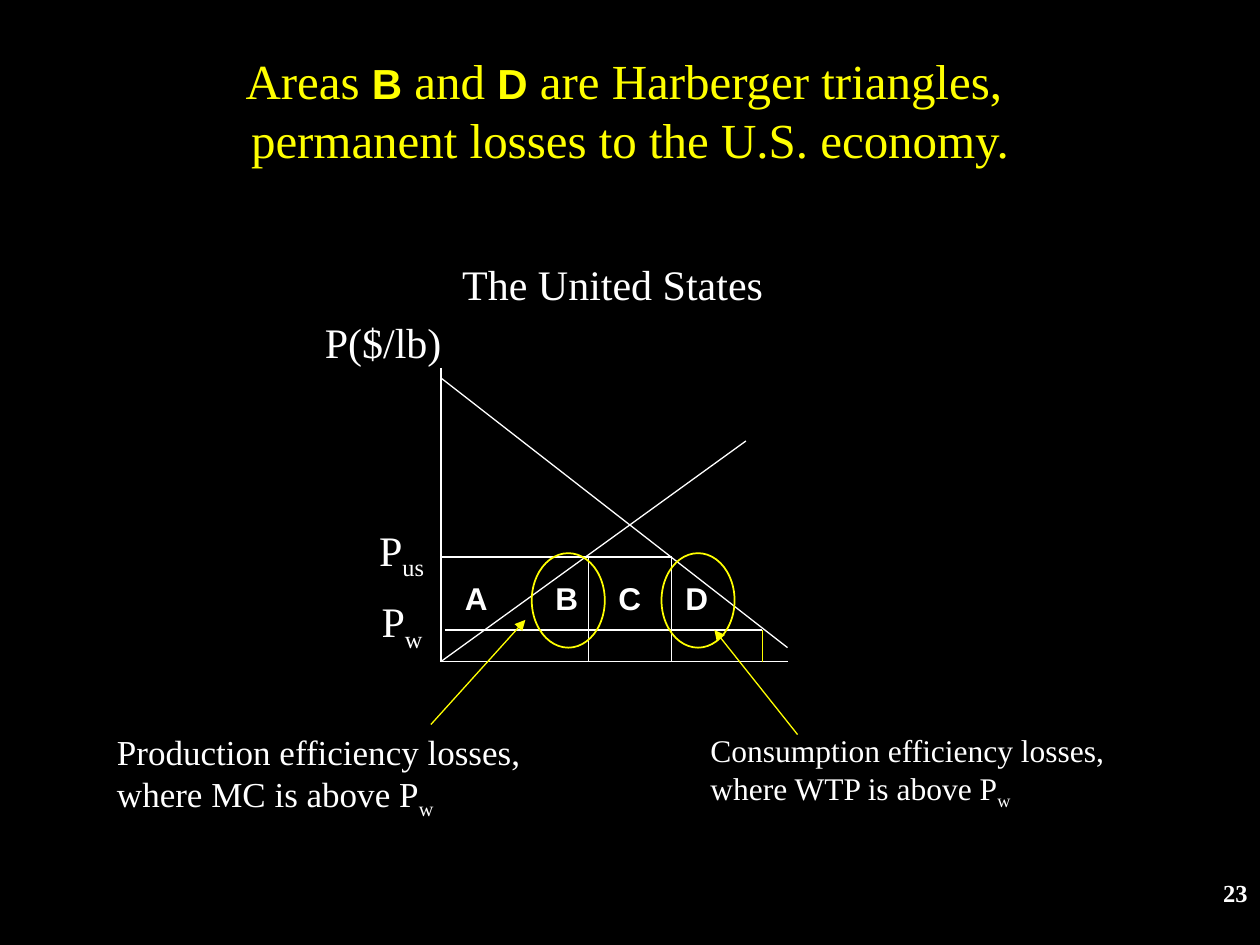
import pptx
import pptx.util
import pptx.dml.color
import pptx.enum.shapes
import pptx.enum.text
import pptx.oxml.ns
from lxml import etree

Inches = pptx.util.Inches
Pt = pptx.util.Pt
ALIGN = pptx.enum.text.PP_ALIGN
COLORS = {"back": "000000", "text": "FFFFFF", "accent": "FFFF00"}
SERIF, SANS = "Times New Roman", "Arial"


def rgb(name):
    return pptx.dml.color.RGBColor.from_string(COLORS[name])


def style_font(font, size, name=SERIF, bold=False, color="text"):
    font.size, font.name, font.bold = Pt(size), name, bold
    font.color.rgb = rgb(color)


def add_text(page, left, top, width, height, lines, size, name=SERIF, bold=False,
             align=ALIGN.LEFT, wrap=False):
    """Each line is a (text, subscript) pair and becomes one paragraph."""
    box = page.shapes.add_textbox(Inches(left), Inches(top), Inches(width), Inches(height))
    box.text_frame.word_wrap = wrap
    for index, (text, subscript) in enumerate(lines):
        para = box.text_frame.paragraphs[0] if index == 0 else box.text_frame.add_paragraph()
        para.alignment = align
        style_font(para.font, size, name, bold)
        para.add_run().text = text
        if subscript:
            span = para.add_run()
            span.text = subscript
            span.font._element.set("baseline", "-25000")


def add_line(page, start, end, color="text", arrow=False):
    line = page.shapes.add_connector(
        pptx.enum.shapes.MSO_CONNECTOR.STRAIGHT, *[Inches(value) for value in start + end])
    line.line.color.rgb = rgb(color)
    line.line.width = Pt(0.75)
    if arrow:
        etree.SubElement(line.line._get_or_add_ln(), pptx.oxml.ns.qn("a:tailEnd"), type="triangle")
    etree.SubElement(line._element.spPr, pptx.oxml.ns.qn("a:effectLst"))


def add_title(page, left, top, width, height):
    box = page.shapes.add_textbox(Inches(left), Inches(top), Inches(width), Inches(height))
    box.text_frame.word_wrap = True
    box.text_frame.vertical_anchor = pptx.enum.text.MSO_ANCHOR.MIDDLE
    para = box.text_frame.paragraphs[0]
    para.alignment = ALIGN.CENTER
    for text, is_area in [("Areas ", False), ("B", True), (" and ", False), ("D", True),
                          (" are Harberger triangles, ", False), (None, False),
                          ("permanent losses to the U.S. economy.", False)]:
        if text is None:
            para.add_line_break()
            continue
        span = para.add_run()
        span.text = text
        style_font(span.font, 24 if is_area else 28, SANS if is_area else SERIF,
                   is_area, "accent")


def add_market(page, left, top, width, height):
    """Supply and demand diagram; the box is the area spanned by the axes."""
    right, base = left + width, top + height
    us_price, world_price = top + 1.5, top + 2.08
    us_supply, us_demand, world_demand = left + 1.17, left + 1.83, left + 2.55

    # Axes, supply and demand
    add_line(page, (left, top), (left, base))
    add_line(page, (left, base), (right, base))
    add_line(page, (left, base), (left + 2.42, top + 0.58))
    add_line(page, (left, top + 0.08), (right, top + 2.22))

    # Prices and quantities
    add_line(page, (left, us_price), (us_demand, us_price))
    add_line(page, (left + 0.03, world_price), (world_demand, world_price))
    for quantity in (us_supply, us_demand):
        add_line(page, (quantity, us_price), (quantity, base))
    add_line(page, (world_demand, world_price), (world_demand, base), "accent")

    # Diagram labels
    for x, y, label_width, text, subscript in [
            (0.07, -0.92, 2.59, "The United States", None),
            (-1.02, -0.46, 1.13, "P($/lb)", None),
            (-0.59, 1.19, 0.59, "P", "us"),
            (-0.57, 1.76, 0.55, "P", "w")]:
        add_text(page, left + x, top + y, label_width, 0.5, [(text, subscript)], 24)
    for x, area in [(0.09, "A"), (0.81, "B"), (1.31, "C"), (1.84, "D")]:
        add_text(page, left + x, top + 1.63, 0.38, 0.4, [(area, None)], 18, SANS, True)

    # Rings around the loss triangles
    for x in (0.72, 1.75):
        ring = page.shapes.add_shape(
            pptx.enum.shapes.MSO_SHAPE.OVAL, Inches(left + x), Inches(top + 1.47),
            Inches(0.58), Inches(0.75))
        ring.shadow.inherit = False
        ring.fill.background()
        ring.line.color.rgb = rgb("accent")
        ring.line.width = Pt(1)


def add_loss_note(page, left, top, width, height, lines, size, start, end):
    """Note with an arrow whose ends are offsets from the note's corner."""
    add_text(page, left, top, width, height, lines, size)
    add_line(page, (left + start[0], top + start[1]), (left + end[0], top + end[1]),
             "accent", arrow=True)


def main():
    deck = pptx.Presentation()
    deck.slide_width, deck.slide_height = Inches(10), Inches(7.5)
    page = deck.slides.add_slide(deck.slide_layouts[6])
    page.background.fill.solid()
    page.background.fill.fore_color.rgb = rgb("back")

    add_title(page, 0.25, 0.33, 9.5, 1.08)
    add_market(page, 3.5, 2.92, 2.75, 2.33)
    add_loss_note(page, 0.83, 5.75, 3.49, 0.77,
                  [("Production efficiency losses,", None), ("where MC is above P", "w")],
                  20, (2.59, 0), (3.34, -0.83))
    add_loss_note(page, 5.54, 5.75, 3.42, 0.71,
                  [("Consumption efficiency losses,", None), ("where WTP is above P", "w")],
                  18, (0.79, 0.08), (0.13, -0.75))

    # Page number
    add_text(page, 8.75, 6.92, 1.25, 0.33, [("23", None)], 14, bold=True,
             align=ALIGN.RIGHT, wrap=True)
    deck.save("out.pptx")


if __name__ == "__main__":
    main()
